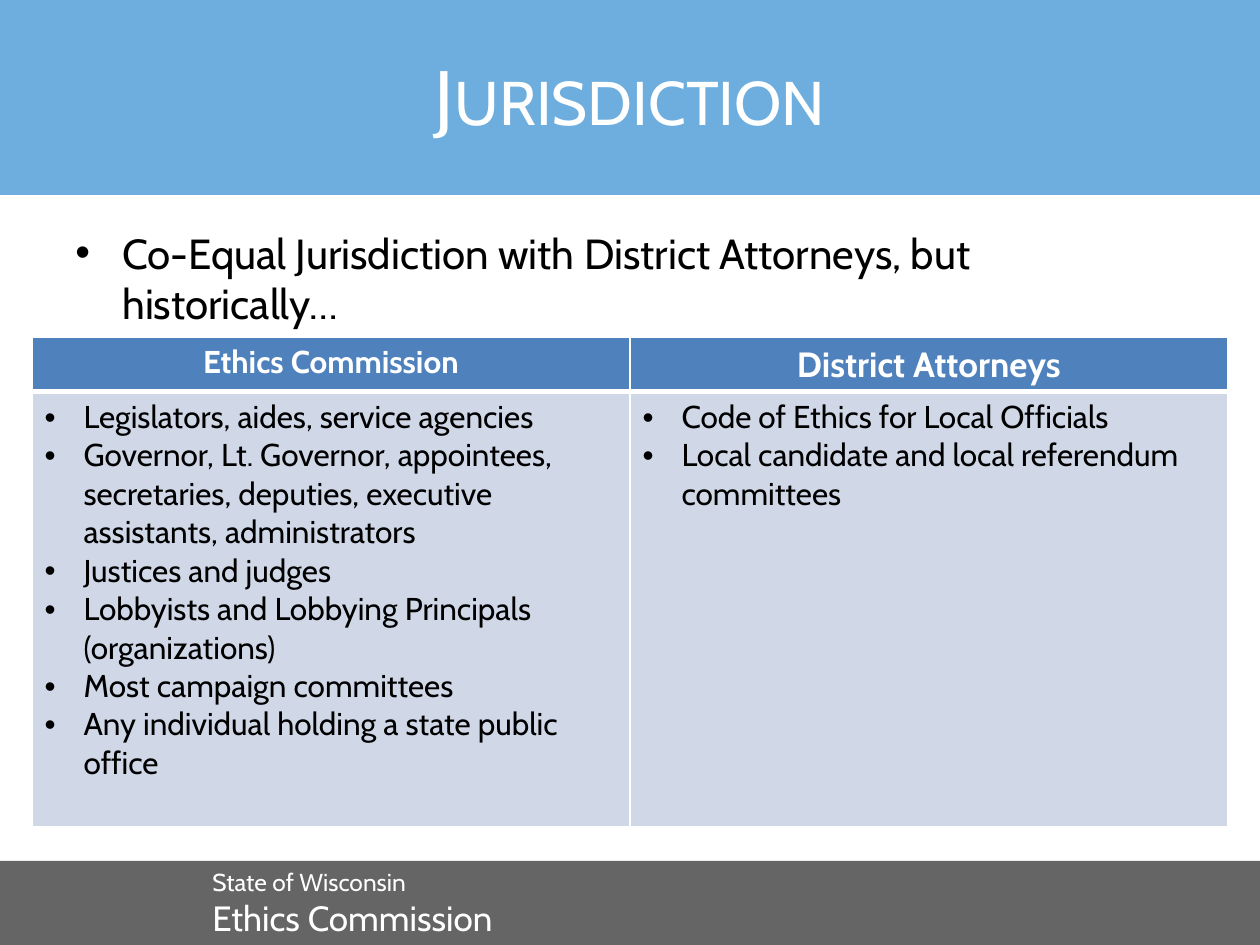
from lxml import etree
from pptx import Presentation
from pptx.dml.color import RGBColor
from pptx.enum.shapes import MSO_SHAPE as Shape
from pptx.enum.text import MSO_ANCHOR as Anchor, PP_ALIGN as Align
from pptx.oxml.ns import qn

PX = 914400 // 126
FONT = "Cabin"
WHITE, BLACK = "FFFFFF", "000000"

TITLE = "Jurisdiction"
LEAD = "Co-Equal Jurisdiction with District Attorneys, but historically…"
FOOTER = [("State of Wisconsin", 14), ("Ethics Commission", 20)]
# top, height, colour, opacity in percent
BANDS = [(0, 195, "0072C6", 57), (861, 84, "555555", 90)]
# heading, heading size, items
COLUMNS = [
    ("Ethics Commission", 18, [
        "Legislators, aides, service agencies",
        "Governor, Lt. Governor, appointees, secretaries, deputies, "
        "executive assistants, administrators",
        "Justices and judges",
        "Lobbyists and Lobbying Principals (organizations)",
        "Most campaign committees",
        "Any individual holding a state public office",
    ]),
    ("District Attorneys", 20, [
        "Code of Ethics for Local Officials",
        "Local candidate and local referendum committees",
    ]),
]
ROWS = [54, 435]
HEAD_FILL, BODY_FILL = "4F81BD", "D0D8E8"


def rgb(code):
    return RGBColor.from_string(code)


def px(*vals):
    return [v * PX for v in vals]


def write(frame, lines, color, bold=False, align=Align.LEFT, indent=0):
    """Fill a frame with (text, size) lines, bulleted if indent is given."""
    for i, (text, size) in enumerate(lines):
        para = frame.paragraphs[0] if i == 0 else frame.add_paragraph()
        para.text = text
        para.alignment = align
        if indent:
            props = para._p.get_or_add_pPr()
            props.set("marL", str(indent * PX))
            props.set("indent", str(-indent * PX))
            etree.SubElement(props, qn("a:buFont")).set("typeface", "Arial")
            etree.SubElement(props, qn("a:buChar")).set("char", "•")
        font = para.font
        font.name, font.bold = FONT, bold
        font.size = size * 12700
        font.color.rgb = rgb(color)


def add_band(shapes, top, height, color, alpha):
    band = shapes.add_shape(Shape.RECTANGLE, *px(0, top, 1260, height))
    band.shadow.inherit = False
    band.line.fill.background()
    band.fill.solid()
    band.fill.fore_color.rgb = rgb(color)
    tint = band._element.spPr.find(".//" + qn("a:srgbClr"))
    etree.SubElement(tint, qn("a:alpha")).set("val", str(alpha * 1000))


def add_text(shapes, box, lines, color, indent=0):
    frame = shapes.add_textbox(*px(*box)).text_frame
    frame.word_wrap = True
    write(frame, lines, color, indent=indent)


def style_cell(cell, fill, top, bottom):
    """Give a cell its fill and white borders, widths in points."""
    props = cell._tc.get_or_add_tcPr()
    for side, width in (("L", 1), ("R", 1), ("T", top), ("B", bottom)):
        line = etree.SubElement(props, qn("a:ln" + side), w=str(width * 12700))
        solid = etree.SubElement(line, qn("a:solidFill"))
        etree.SubElement(solid, qn("a:srgbClr")).set("val", WHITE)
    cell.fill.solid()
    cell.fill.fore_color.rgb = rgb(fill)


def add_grid(shapes):
    size = px(32, 337, 1196, sum(ROWS))
    table = shapes.add_table(2, len(COLUMNS), *size).table
    for row, height in zip(table.rows, ROWS):
        row.height = height * PX
    for i, (name, pt, items) in enumerate(COLUMNS):
        head, body = table.cell(0, i), table.cell(1, i)
        style_cell(head, HEAD_FILL, 1, 3)
        style_cell(body, BODY_FILL, 3, 1)
        write(head.text_frame, [(name, pt)], WHITE, True, Align.CENTER)
        write(body.text_frame, [(t, 18) for t in items], BLACK, indent=39)


def add_title(slide):
    title = slide.shapes.title
    title.left, title.top, title.width, title.height = px(63, 38, 1134, 157)
    frame = title.text_frame
    frame.vertical_anchor = Anchor.TOP
    frame.margin_top = 10 * PX
    write(frame, [(TITLE, 44)], WHITE, align=Align.CENTER)
    frame.paragraphs[0].runs[0]._r.get_or_add_rPr().set("cap", "small")
    slide.shapes._spTree.append(title._element)  # in front of the bands


def main():
    deck = Presentation()
    deck.slide_width, deck.slide_height = px(1260, 945)
    slide = deck.slides.add_slide(deck.slide_layouts[5])
    shapes = slide.shapes
    for band in BANDS:
        add_band(shapes, *band)
    add_text(shapes, (200, 861, 504, 84), FOOTER, WHITE)
    add_title(slide)
    add_text(shapes, (63, 221, 1134, 624), [(LEAD, 24)], BLACK, indent=47)
    add_grid(shapes)
    deck.save("out.pptx")


if __name__ == "__main__":
    main()
